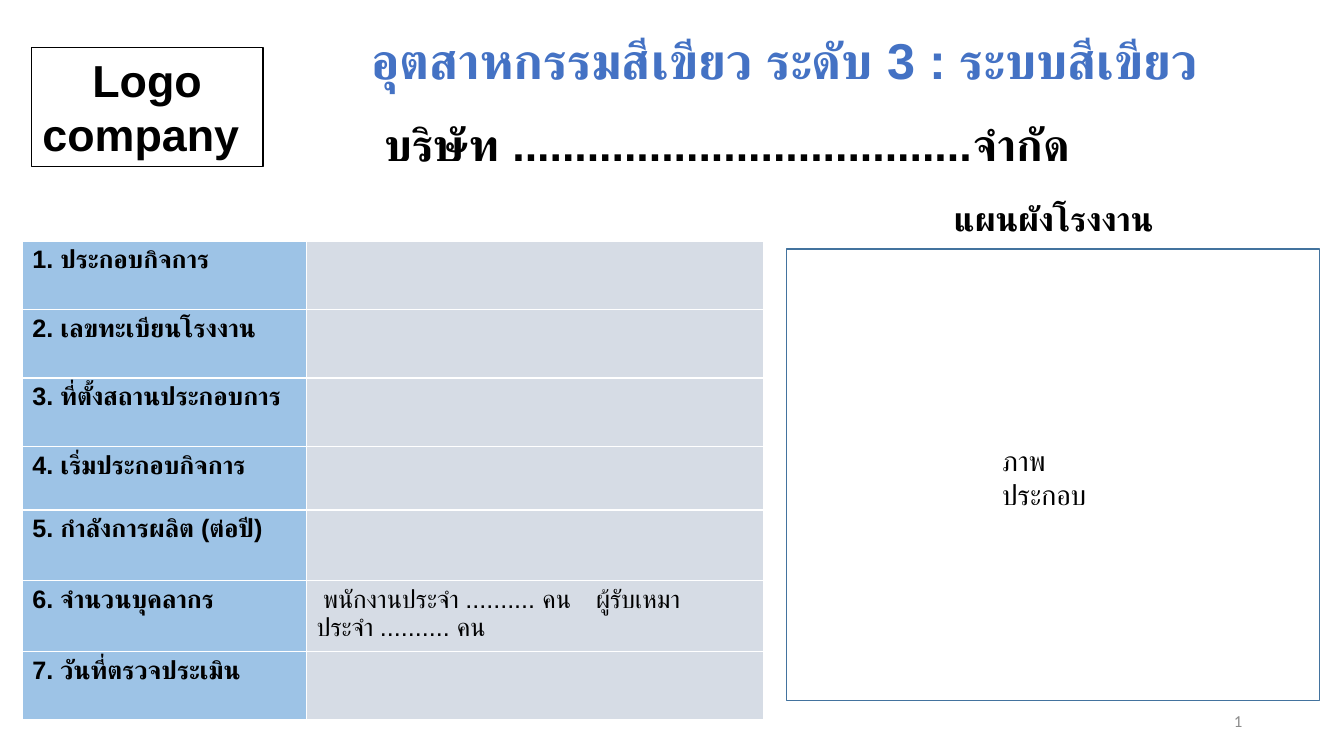
from dataclasses import dataclass
from lxml.etree import SubElement
from pptx import Presentation
from pptx.dml.color import RGBColor
from pptx.enum.shapes import MSO_SHAPE
from pptx.enum.text import MSO_ANCHOR, MSO_AUTO_SIZE, PP_ALIGN
from pptx.oxml.ns import qn
from pptx.util import Inches, Pt


@dataclass
class Style:
    size: int
    color: str = "000000"
    bold: bool = True
    font: str = "Arial"
    align: PP_ALIGN = PP_ALIGN.CENTER
    anchor: MSO_ANCHOR = MSO_ANCHOR.MIDDLE
    space: float = 1.0


@dataclass
class Box:
    at: tuple[float, float, float, float]
    text: str = ""
    style: Style | None = None
    fill: str | None = None
    line: str | None = None


@dataclass
class Row:
    label: str
    height: float = 0.68
    value: str = ""


def color(code: str) -> RGBColor:
    return RGBColor.from_string(code)


def paint(item, code: str) -> None:
    item.fill.solid()
    item.fill.fore_color.rgb = color(code)


def place(shape, at: tuple[float, float, float, float]) -> None:
    shape.left, shape.top, shape.width, shape.height = map(Inches, at)


def write(frame, text: str, style: Style) -> None:
    frame.word_wrap = True
    frame.auto_size = MSO_AUTO_SIZE.NONE
    frame.vertical_anchor = style.anchor
    frame.text = text
    format_line(frame.paragraphs[0], style)


def format_line(line, style: Style) -> None:
    line.alignment = style.align
    line.line_spacing = style.space
    line.font.size = Pt(style.size)
    line.font.bold = style.bold
    line.font.name = style.font
    line.font.color.rgb = color(style.color)


def draw_shape(slide, box: Box) -> None:
    shape = slide.shapes.add_shape(MSO_SHAPE.RECTANGLE, *map(Inches, box.at))
    shape.shadow.inherit = False
    if box.fill:
        paint(shape, box.fill)
    else:
        shape.fill.background()
    if box.line:
        shape.line.color.rgb = color(box.line)
        shape.line.width = Pt(1)
    else:
        shape.line.fill.background()
    if box.style:
        write(shape.text_frame, box.text, box.style)


def draw_text(slide, box: Box):
    shape = slide.shapes.add_textbox(*map(Inches, box.at))
    write(shape.text_frame, box.text, box.style)
    return shape


def draw_number(slide, box: Box) -> None:
    line = draw_text(slide, box).text_frame.paragraphs[0]
    field = SubElement(line._p, qn("a:fld"), type="slidenum",
                       id="{B6F15528-21DE-4FAA-801E-634DDDAF4B2B}")
    SubElement(field, qn("a:rPr"), lang="en-US")
    SubElement(field, qn("a:t")).text = "1"


def edge_cell(cell, code: str) -> None:
    props = cell._tc.get_or_add_tcPr()
    for side in ("lnL", "lnR", "lnT", "lnB"):
        edge = SubElement(props, qn(f"a:{side}"), w=str(Pt(1)))
        fill = SubElement(edge, qn("a:solidFill"))
        SubElement(fill, qn("a:srgbClr"), val=code)


def draw_table(slide, rows: list[Row]) -> None:
    widths = (2.82, 4.53)
    height = sum(row.height for row in rows)
    table = slide.shapes.add_table(
        len(rows), len(widths), Inches(0.22), Inches(2.39),
        Inches(sum(widths)), Inches(height)).table
    table.first_row = table.horz_banding = False
    for col, width in zip(table.columns, widths):
        col.width = Inches(width)
    for line, row in zip(table.rows, rows):
        line.height = Inches(row.height)
        texts = (row.label, row.value)
        for cell, text, fill, style in zip(line.cells, texts, FILLS, (LABEL, VALUE)):
            edge_cell(cell, "FFFFFF")
            paint(cell, fill)
            cell.text = text
            format_line(cell.text_frame.paragraphs[0], style)


FILLS = ("9DC3E6", "D6DCE5")
LABEL = Style(18, align=PP_ALIGN.LEFT)
VALUE = Style(18, bold=False, align=PP_ALIGN.LEFT)
NAME = Style(32)
ROWS = [
    Row("1. ประกอบกิจการ"),
    Row("2. เลขทะเบียนโรงงาน"),
    Row("3. ที่ตั้งสถานประกอบการ"),
    Row("4. เริ่มประกอบกิจการ", 0.63),
    Row("5. กำลังการผลิต (ต่อปี)", 0.7),
    Row("6. จำนวนบุคลากร", 0.7,
        " พนักงานประจำ .......... คน    ผู้รับเหมาประจำ .......... คน"),
    Row("7. วันที่ตรวจประเมิน"),
]
FIRM = Box((3.37, 1.1, 7.68, 0.64),
           "บริษัท .....................................จำกัด", NAME, "FFFFFF")
LOGO = Box((0.31, 0.47, 2.3, 1.18), "Logo company ", NAME, "FFFFFF", "000000")
PLAN = Box((7.8, 2.47, 5.29, 4.48), line="43739E")
HEAD = Box((8.91, 1.76, 3.08, 0.86), "แผนผังโรงงาน", Style(24, space=0.9))
NOTE = Box((9.84, 4.35, 1.21, 0.44), "ภาพประกอบ",
           Style(20, bold=False, font="Calibri", align=PP_ALIGN.LEFT,
                 anchor=MSO_ANCHOR.TOP))
PAGE = Box((9.42, 6.95, 3, 0.4), "",
           Style(12, "8C8C8C", False, "Calibri", PP_ALIGN.RIGHT))


def main() -> None:
    deck = Presentation()
    deck.slide_width, deck.slide_height = Inches(13.33), Inches(7.5)
    slide = deck.slides.add_slide(deck.slide_layouts[5])
    title = slide.shapes.title
    place(title, (2.61, 0.2, 10.49, 0.86))
    write(title.text_frame, "อุตสาหกรรมสีเขียว ระดับ 3 : ระบบสีเขียว ",
          Style(36, "4472C4", space=0.9))
    for box in (FIRM, LOGO, PLAN):
        draw_shape(slide, box)
    draw_table(slide, ROWS)
    for box in (HEAD, NOTE):
        draw_text(slide, box)
    draw_number(slide, PAGE)
    deck.save("out.pptx")


if __name__ == "__main__":
    main()
